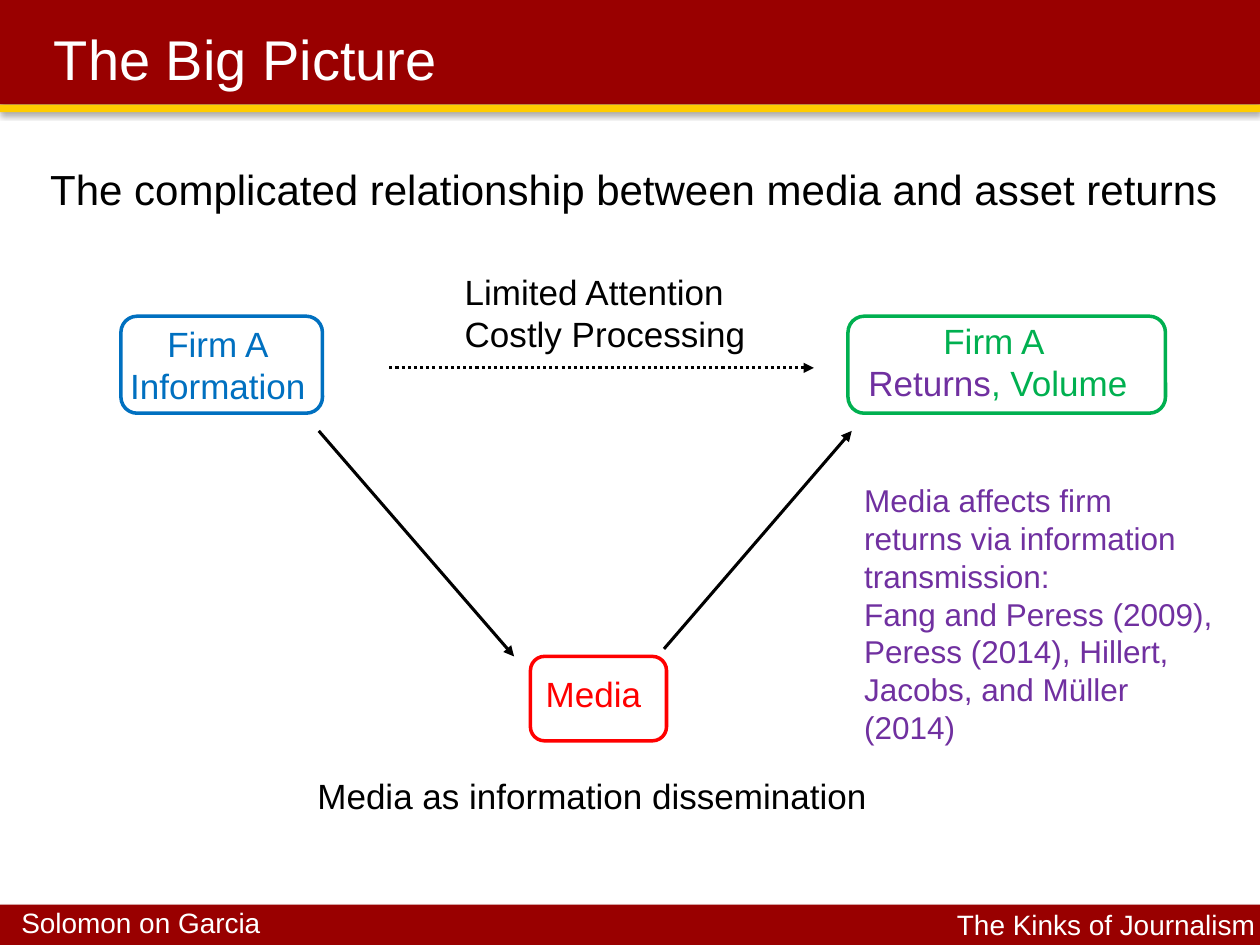
import dataclasses

import lxml.etree
import pptx
import pptx.dml.color
import pptx.enum.dml
import pptx.enum.shapes
import pptx.enum.text
import pptx.oxml.ns
import pptx.util

Inches = pptx.util.Inches
Pt = pptx.util.Pt
Align = pptx.enum.text.PP_ALIGN
Anchor = pptx.enum.text.MSO_ANCHOR
Shape = pptx.enum.shapes.MSO_SHAPE


@dataclasses.dataclass(frozen=True)
class Theme:
    font: str = "Arial"
    crimson: str = "990000"
    gold: str = "FFCC00"
    white: str = "FFFFFF"
    black: str = "000000"
    blue: str = "0070C0"
    red: str = "FF0000"
    green: str = "00B050"
    purple: str = "7030A0"
    title: int = 32
    lead: int = 24
    label: int = 20
    note: int = 18
    footer: int = 16
    outline: float = 2
    arrow: float = 1.75


def rgb(code):
    return pptx.dml.color.RGBColor.from_string(code)


def add_xml(parent, tag, **attributes):
    return lxml.etree.SubElement(parent, pptx.oxml.ns.qn(tag), attributes)


class SlideBuilder:
    def __init__(self, slide, theme):
        self.shapes = slide.shapes
        self.theme = theme

    def band(self, top, height, color):
        """Full-width bar with a soft shadow below it."""
        bar = self.shapes.add_shape(
            Shape.RECTANGLE, 0, Inches(top), Inches(10), Inches(height))
        bar.fill.solid()
        bar.fill.fore_color.rgb = rgb(color)
        bar.line.fill.background()
        effects = add_xml(bar._element.spPr, "a:effectLst")
        shadow = add_xml(effects, "a:outerShdw", blurRad=str(Pt(3.1)),
                         dist=str(Pt(1.8)), dir="5400000", rotWithShape="0")
        tint = add_xml(shadow, "a:srgbClr", val=self.theme.black)
        add_xml(tint, "a:alpha", val="35000")

    def node(self, left, top, width, height, color):
        frame = self.shapes.add_shape(
            Shape.ROUNDED_RECTANGLE, *map(Inches, (left, top, width, height)))
        frame.shadow.inherit = False
        frame.fill.background()
        frame.line.color.rgb = rgb(color)
        frame.line.width = Pt(self.theme.outline)

    def arrow(self, start, end, dash=None):
        line = self.shapes.add_connector(
            pptx.enum.shapes.MSO_CONNECTOR.STRAIGHT, *map(Inches, start + end))
        line.line.color.rgb = rgb(self.theme.black)
        line.line.width = Pt(self.theme.arrow)
        if dash:
            line.line.dash_style = dash
        add_xml(line.line._get_or_add_ln(), "a:tailEnd", type="triangle")
        add_xml(line._element.spPr, "a:effectLst")

    def text(self, box, paragraphs, size, color, align=Align.LEFT, **frame_format):
        """Each paragraph is a string or a list of (text, color) runs."""
        frame = self.shapes.add_textbox(*map(Inches, box)).text_frame
        for name, value in {"word_wrap": True, **frame_format}.items():
            setattr(frame, name, value)
        for index, content in enumerate(paragraphs):
            paragraph = frame.paragraphs[0] if index == 0 else frame.add_paragraph()
            paragraph.alignment = align
            runs = [(content, color)] if isinstance(content, str) else content
            for words, tint in runs:
                self.run(paragraph, words, size, tint)

    def run(self, paragraph, words, size, color):
        for index, line in enumerate(words.split("\n")):
            if index:
                paragraph.add_line_break()
            run = paragraph.add_run()
            run.text = line
            for name, value in {"name": self.theme.font, "size": Pt(size)}.items():
                setattr(run.font, name, value)
            run.font.color.rgb = rgb(color)


def main():
    deck = pptx.Presentation()
    deck.slide_width, deck.slide_height = Inches(10), Inches(7.5)
    theme = Theme()
    page = SlideBuilder(deck.slides.add_slide(deck.slide_layouts[6]), theme)

    for top, height, color in ((7.18, 0.32, theme.crimson),
                               (0, 0.83, theme.crimson),
                               (0.83, 0.06, theme.gold)):
        page.band(top, height, color)

    no_margins = dict.fromkeys(
        ("margin_left", "margin_top", "margin_right", "margin_bottom"), 0)
    for left, top, words, align in (
            (0.17, 7.19, "Solomon on Garcia", Align.LEFT),
            (6.69, 7.2, "The Kinks of Journalism", Align.RIGHT)):
        page.text((left, top, 3.27, 0.27), [words], theme.footer, theme.white,
                  align, **no_margins)

    page.text((0.33, 0.17, 9, 0.58), ["The Big Picture"], theme.title,
              theme.white, vertical_anchor=Anchor.MIDDLE)
    page.text((0.3, 1.25, 9.83, 0.58),
              ["The complicated relationship between media and asset returns"],
              theme.lead, theme.black)

    page.node(0.96, 2.51, 1.6, 0.77, theme.blue)
    page.text((0.93, 2.51, 1.6, 0.77), ["Firm A", "Information"],
              theme.label, theme.blue, Align.CENTER, word_wrap=False)
    page.node(4.21, 5.21, 1.08, 0.67, theme.red)
    page.text((4.21, 5.29, 1, 0.44), ["Media"],
              theme.label, theme.red, Align.CENTER)
    page.node(6.73, 2.51, 2.52, 0.77, theme.green)
    page.text((6.76, 2.49, 2.32, 0.77),
              ["Firm A ", [("Returns", theme.purple), (", Volume", theme.green)]],
              theme.label, theme.green, Align.CENTER)

    page.arrow((2.53, 3.42), (4.08, 5.21))
    page.arrow((5.27, 5.15), (6.76, 3.42))
    page.arrow((3.09, 2.92), (6.46, 2.92),
               pptx.enum.dml.MSO_LINE_DASH_STYLE.ROUND_DOT)

    page.text((3.59, 2.1, 2.46, 0.77), ["Limited Attention\nCostly Processing"],
              theme.label, theme.black)
    page.text((2.42, 6.1, 5.12, 0.44), ["Media as information dissemination"],
              theme.label, theme.black)
    page.text((6.76, 3.77, 2.99, 2.22),
              ["Media affects firm returns via information transmission:",
               "Fang and Peress (2009), Peress (2014), Hillert, Jacobs, "
               "and Müller (2014)"],
              theme.note, theme.purple)

    deck.save("out.pptx")


if __name__ == "__main__":
    main()
